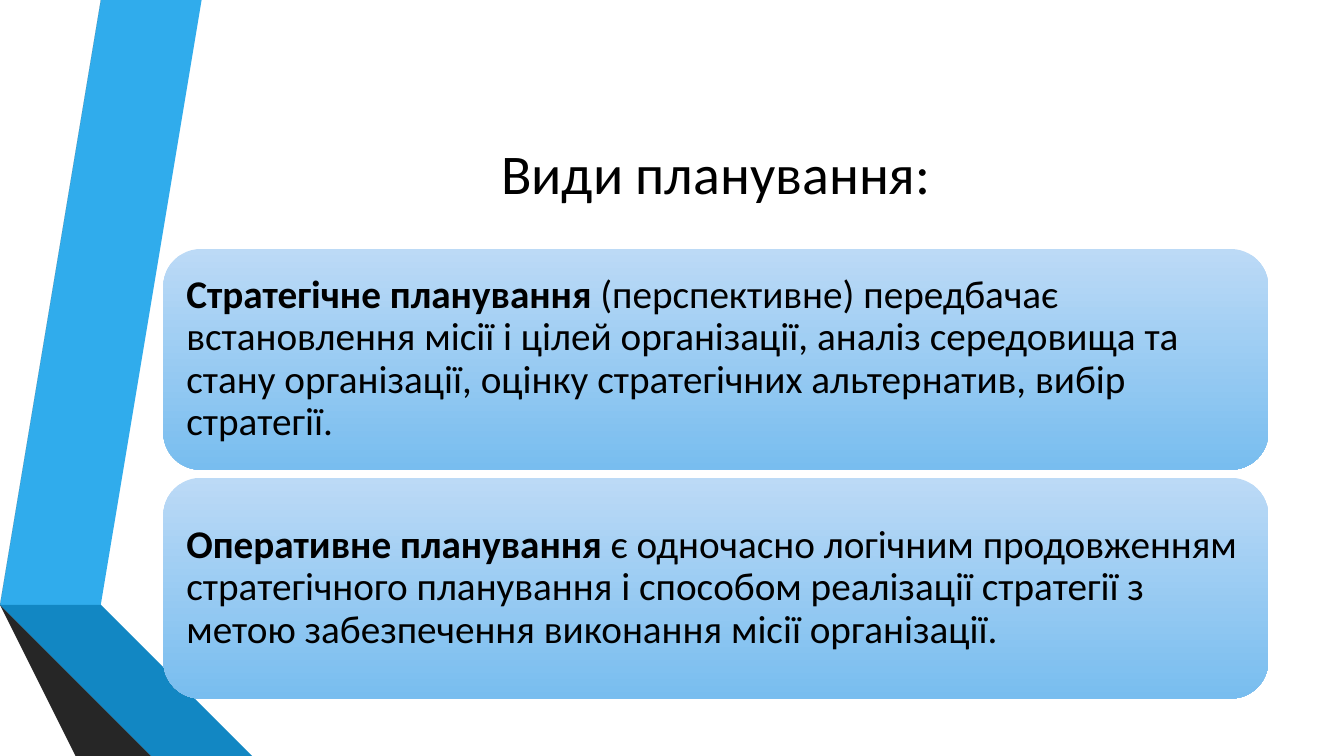
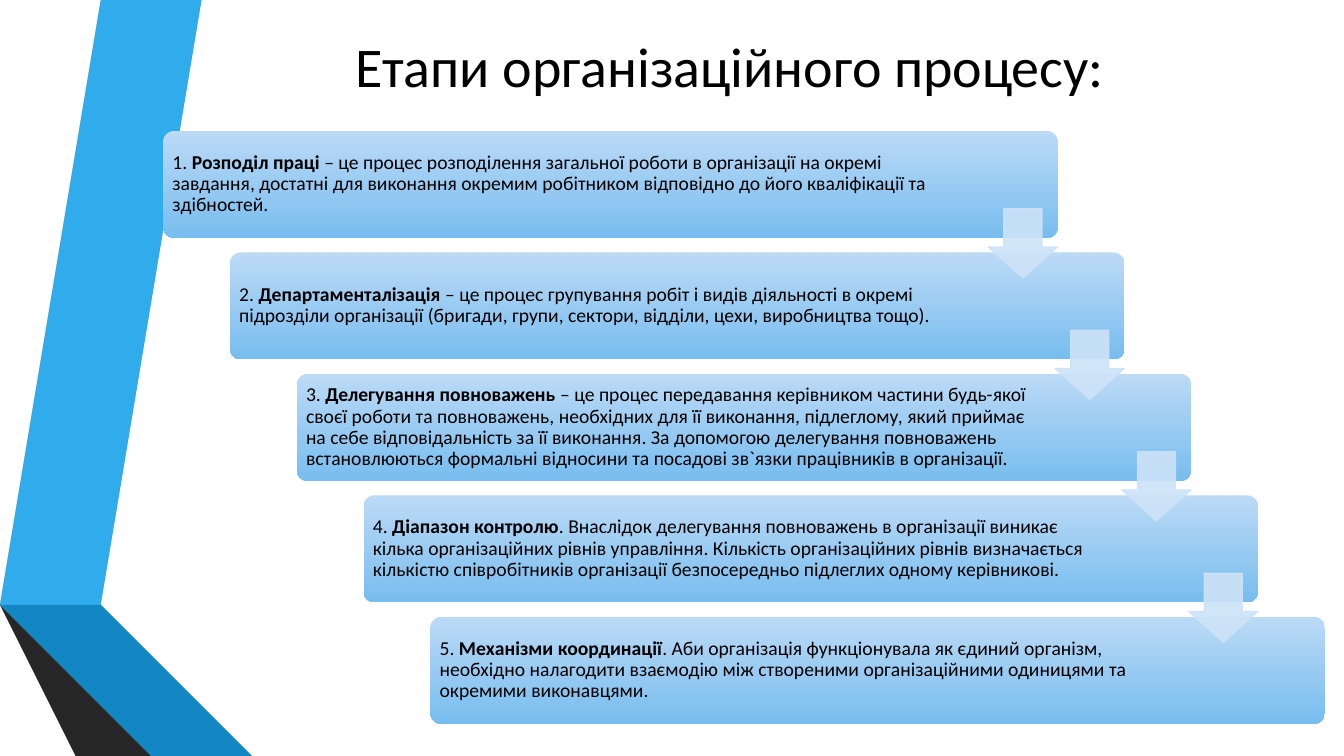
"""Build two slides on planning types and the stages of organizing."""
from lxml.etree import SubElement
from pptx import Presentation
from pptx.dml.color import RGBColor
from pptx.enum.shapes import MSO_SHAPE as Shape, PP_PLACEHOLDER as Holder
from pptx.enum.text import MSO_ANCHOR as Anchor, PP_ALIGN as Align
from pptx.oxml.ns import qn
from pptx.util import Inches, Pt

WIDTH, HEIGHT = 13.33, 7.5
LEFT = 1.62
FONT = "Calibri"
COLORS = {
    "text": "000000", "panel_top": "BCDAF6", "panel_bottom": "78BDEF",
    "arrow": "CDE3F8", "blue": "30ACEC", "gray": "595959",
    "black": "262626", "navy": "0C5A82", "deep_blue": "1287C3", "dark_gray": "404040",
}
BANDS = [
    ("blue", [(0.5, 5.78), (0.77, 5.83), (1.73, 0), (1.45, 0)]),
    ("gray", [(1.39, 0), (1.11, 0), (0.16, 5.73), (0.44, 5.77)]),
    ("black", [(0.16, 5.73), (1.45, HEIGHT), (1.51, HEIGHT)]),
    ("navy", [(0.5, 5.79), (2.08, HEIGHT), (2.14, HEIGHT)]),
    ("deep_blue", [(0.5, 5.78), (2.14, HEIGHT), (2.83, HEIGHT), (0.77, 5.83)]),
    ("dark_gray", [(2.02, HEIGHT), (0.48, 5.83), (0.43, 5.77), (0.16, 5.73), (1.51, HEIGHT)]),
]
KINDS = [
    ("", "Стратегічне планування ",
     "(перспективне) передбачає встановлення місії і цілей організації, аналіз середовища та "
     "стану організації, оцінку стратегічних альтернатив, вибір стратегії."),
    ("", "Оперативне планування ",
     "є одночасно логічним продовженням стратегічного планування і способом реалізації "
     "стратегії з метою забезпечення виконання місії організації."),
]
STAGES = [
    ("1. ", "Розподіл праці ",
     "– це процес розподілення загальної роботи в організації на окремі завдання, достатні для "
     "виконання окремим робітником відповідно до його кваліфікації та здібностей."),
    ("2. ", "Департаменталізація",
     " – це процес групування робіт і видів діяльності в окремі підрозділи організації "
     "(бригади, групи, сектори, відділи, цехи, виробництва тощо)."),
    ("3. ", "Делегування повноважень ",
     "– це процес передавання керівником частини будь-якої своєї роботи та повноважень, "
     "необхідних для її виконання, підлеглому, який приймає на себе відповідальність за її "
     "виконання. За допомогою делегування повноважень встановлюються формальні відносини та "
     "посадові зв`язки працівників в організації."),
    ("4. ", "Діапазон контролю",
     ". Внаслідок делегування повноважень в організації виникає кілька організаційних рівнів "
     "управління. Кількість організаційних рівнів визначається кількістю співробітників "
     "організації безпосередньо підлеглих одному керівникові."),
    ("5. ", "Механізми координації",
     ". Аби організація функціонувала як єдиний організм, необхідно налагодити взаємодію між "
     "створеними організаційними одиницями та окремими виконавцями."),
]


def color(name):
    """Return the named colour."""
    return RGBColor.from_string(COLORS[name])


def set_values(target, values):
    """Set each attribute of the target from a dict."""
    for name, value in values.items():
        setattr(target, name, value)


def place(shape, left, top, width, height):
    """Position a shape, in inches."""
    box = {"left": left, "top": top, "width": width, "height": height}
    set_values(shape, {name: Inches(value) for name, value in box.items()})


def add_run(paragraph, text, size, bold=False):
    """Append one formatted run."""
    run = paragraph.add_run()
    run.text = text
    set_values(run.font, {"name": FONT, "size": Pt(size), "bold": bold})
    run.font.color.rgb = color("text")


def add_bands(slide, layout):
    """Draw the ribbon as a group and move it to the layout."""
    group = slide.shapes.add_group_shape()
    for name, points in BANDS:
        builder = group.shapes.build_freeform(*points[0], scale=Inches(1))
        builder.add_line_segments(points[1:], close=True)
        band = builder.convert_to_shape()
        band.shadow.inherit = False
        band.fill.solid()
        band.fill.fore_color.rgb = color(name)
        band.line.fill.background()
    layout.shapes.element.append(group.element)


def set_title(slide, text, *box):
    """Place and format the title placeholder."""
    title = slide.shapes.title
    place(title, *box)
    title.text_frame.vertical_anchor = Anchor.MIDDLE
    paragraph = title.text_frame.paragraphs[0]
    paragraph.alignment = Align.CENTER
    add_run(paragraph, text, 40)


def add_panel(slide, box, texts, size, inset, right_inset, corner):
    """Add a rounded gradient panel with a bold term in its text."""
    panel = slide.shapes.add_shape(Shape.ROUNDED_RECTANGLE, *map(Inches, box))
    panel.shadow.inherit = False
    panel.adjustments[0] = corner
    panel.line.fill.background()
    panel.fill.gradient()
    panel.fill.gradient_angle = 270
    for stop, name in zip(panel.fill.gradient_stops, ("panel_top", "panel_bottom")):
        stop.color.rgb = color(name)
    frame = panel.text_frame
    set_values(frame, {
        "word_wrap": True, "vertical_anchor": Anchor.MIDDLE,
        "margin_left": Inches(inset), "margin_right": Inches(right_inset),
        "margin_top": Inches(inset), "margin_bottom": Inches(inset),
    })
    paragraph = frame.paragraphs[0]
    set_values(paragraph, {"alignment": Align.LEFT, "line_spacing": 0.9})
    number, term, description = texts
    if number:
        add_run(paragraph, number, size)
    add_run(paragraph, term, size, True)
    add_run(paragraph, description, size)


def add_arrow(slide, left, top, side):
    """Add a translucent down arrow."""
    arrow = slide.shapes.add_shape(Shape.DOWN_ARROW, *map(Inches, (left, top, side, side)))
    arrow.shadow.inherit = False
    arrow.adjustments[0], arrow.adjustments[1] = 0.55, 0.45
    arrow.line.width = Pt(0.75)
    for fill in (arrow.fill, arrow.line.fill):
        fill.solid()
        fill.fore_color.rgb = color("arrow")
    for node in arrow.element.spPr.iter(qn("a:srgbClr")):
        SubElement(node, qn("a:alpha"), val="90000")


def fill_kinds(slide):
    """Stack the two kinds of planning."""
    width, height, gap, top = 10.96, 2.19, 0.08, 2.47
    set_title(slide, "Види планування:", LEFT, HEIGHT / 10, width, 1.92)
    for row, texts in enumerate(KINDS):
        box = (LEFT, top + row * (height + gap), width, height)
        add_panel(slide, box, texts, 28, 0.12, 0.12, 0.17)


def fill_stages(slide):
    """Lay the stages out as a staircase joined by arrows."""
    width, height, top, side, overlap = 8.87, 1.06, 1.3, 0.69, 0.29
    steps = len(STAGES) - 1
    shift = (4.27 - LEFT) / steps
    pitch = (6.12 - top) / steps
    set_title(slide, "Етапи організаційного процесу:", 1.76, 0, 10.96, top)
    corners = [(LEFT + i * shift, top + i * pitch) for i in range(steps + 1)]
    for row, (corner, texts) in enumerate(zip(corners, STAGES)):
        right_inset = 1.41 if row else 1.26
        add_panel(slide, (*corner, width, height), texts, 14, 0.06, right_inset, 0.1)
    for left, upper in corners[:-1]:
        add_arrow(slide, left + width - side, upper + height - overlap, side)


def main():
    """Build and save the presentation."""
    presentation = Presentation()
    presentation.slide_width, presentation.slide_height = Inches(WIDTH), Inches(HEIGHT)
    layout = presentation.slide_layouts.get_by_name("Title Only")
    for holder in list(layout.placeholders):
        if holder.placeholder_format.type != Holder.TITLE:
            layout.shapes.element.remove(holder.element)
    kinds, stages = [presentation.slides.add_slide(layout) for _ in range(2)]
    add_bands(kinds, layout)
    fill_kinds(kinds)
    fill_stages(stages)
    presentation.save("out.pptx")


if __name__ == "__main__":
    main()
